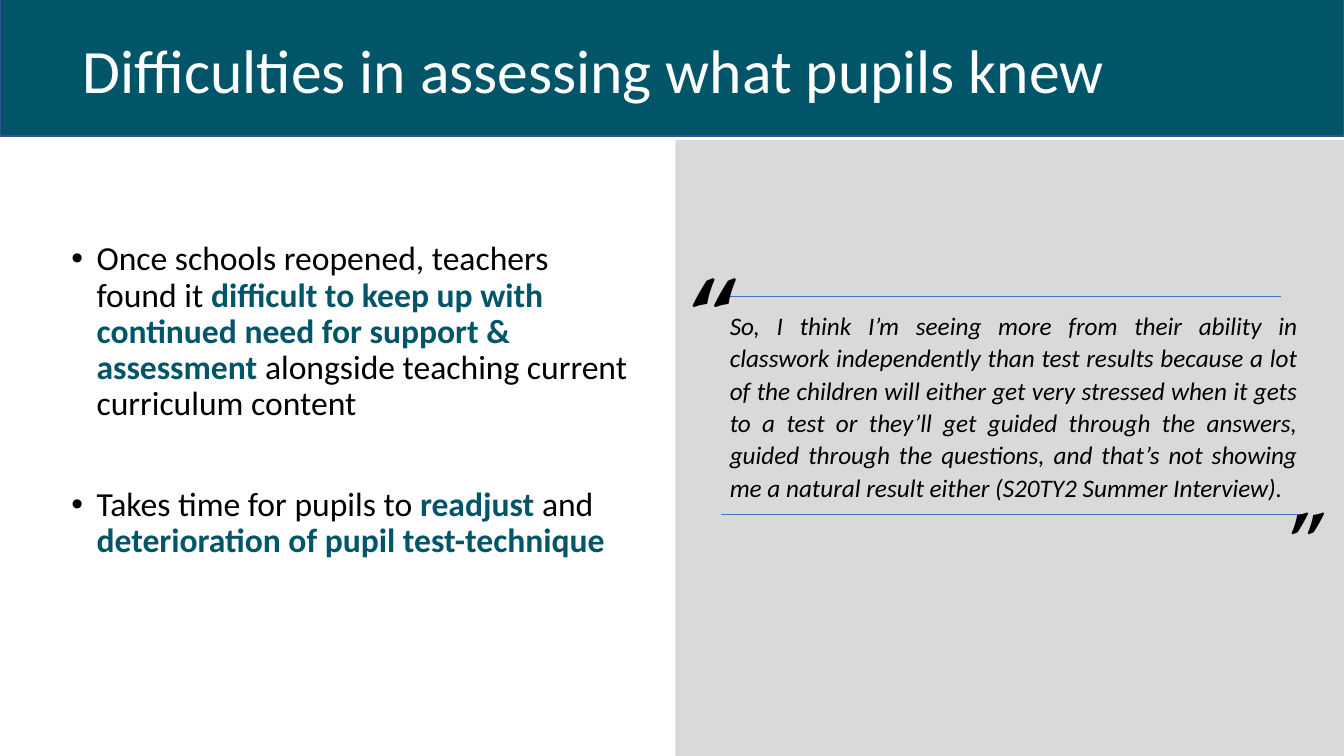
from dataclasses import dataclass

from lxml.etree import SubElement
from pptx import Presentation
from pptx.dml.color import RGBColor
from pptx.enum.shapes import MSO_CONNECTOR as Connector, MSO_SHAPE as Shape
from pptx.enum.text import MSO_ANCHOR as Anchor, MSO_AUTO_SIZE as AutoSize, PP_ALIGN as Align
from pptx.oxml.ns import qn
from pptx.util import Inches, Pt


@dataclass(frozen=True)
class Theme:
    teal: str = "005568"
    grey: str = "D9D9D9"
    black: str = "000000"
    white: str = "FFFFFF"
    banner_edge: str = "325491"
    rule: str = "4472C4"
    body_font: str = "Calibri"
    mark_font: str = "TeX Gyre Pagella"
    title_size: int = 44
    body_size: int = 24
    quote_size: int = 18
    open_mark_size: int = 72
    close_mark_size: int = 54


class SlideBuilder:
    def __init__(self, slide, theme):
        self.shapes = slide.shapes
        self.theme = theme

    def panel(self, left, top, width, height, fill, edge=None):
        panel = self.shapes.add_shape(
            Shape.RECTANGLE, Inches(left), Inches(top), Inches(width), Inches(height))
        panel.shadow.inherit = False
        panel.fill.solid()
        panel.fill.fore_color.rgb = RGBColor.from_string(fill)
        if edge:
            panel.line.color.rgb = RGBColor.from_string(edge)
            panel.line.width = Pt(1)
        else:
            panel.line.fill.background()

    def rule(self, start, end, height):
        rule = self.shapes.add_connector(
            Connector.STRAIGHT, Inches(start), Inches(height), Inches(end), Inches(height))
        rule.line.color.rgb = RGBColor.from_string(self.theme.rule)
        rule.line.width = Pt(0.5)
        SubElement(rule._element.spPr, qn("a:effectLst"))

    def frame(self, left, top, width, height, anchor=Anchor.TOP, grow=False):
        frame = self.shapes.add_textbox(
            Inches(left), Inches(top), Inches(width), Inches(height)).text_frame
        frame.word_wrap = True
        frame.vertical_anchor = anchor
        frame.auto_size = AutoSize.SHAPE_TO_FIT_TEXT if grow else AutoSize.NONE
        return frame

    def run(self, paragraph, text, size, color, font=None, bold=False, italic=False):
        run = paragraph.add_run()
        run.text = text
        run.font.name = font or self.theme.body_font
        run.font.size = Pt(size)
        run.font.bold = bold
        run.font.italic = italic
        run.font.color.rgb = RGBColor.from_string(color)

    def title(self, text):
        paragraph = self.frame(0.72, 0, 11.5, 1.45, Anchor.MIDDLE).paragraphs[0]
        paragraph.line_spacing = 0.9
        self.run(paragraph, text, self.theme.title_size, self.theme.white)

    def bullets(self, left, top, width, height, points):
        frame = self.frame(left, top, width, height)
        for index, (space_before, phrases) in enumerate(points):
            paragraph = frame.add_paragraph() if index else frame.paragraphs[0]
            paragraph.line_spacing = 0.9
            paragraph.space_before = Pt(space_before)
            properties = paragraph._p.get_or_add_pPr()
            properties.set("marL", str(Inches(0.25)))
            properties.set("indent", str(Inches(-0.25)))
            SubElement(properties, qn("a:buFont")).set("typeface", "Arial")
            SubElement(properties, qn("a:buChar")).set("char", "•")
            for text, emphasised in phrases:
                color = self.theme.teal if emphasised else self.theme.black
                self.run(paragraph, text, self.theme.body_size, color, bold=emphasised)

    def quote(self, left, top, width, height, text):
        paragraph = self.frame(left, top, width, height, grow=True).paragraphs[0]
        paragraph.alignment = Align.JUSTIFY
        paragraph.line_spacing = 1.07
        paragraph.space_after = Pt(8)
        paragraph._p.get_or_add_pPr().set("marL", str(Inches(0.5)))
        self.run(paragraph, text, self.theme.quote_size, self.theme.black, italic=True)

    def quote_mark(self, left, top, width, height, mark, size):
        paragraph = self.frame(left, top, width, height, grow=True).paragraphs[0]
        self.run(paragraph, mark, size, self.theme.black, self.theme.mark_font, bold=True)


FINDINGS = [
    (10, [
        ("Once schools reopened, teachers found it ", False),
        ("difficult to keep up with continued need for support & assessment ", True),
        ("alongside teaching current curriculum content", False),
    ]),
    (46, [
        ("Takes time for pupils to ", False),
        ("readjust", True),
        (" and ", False),
        ("deterioration of pupil test-technique", True),
    ]),
]
TEACHER_QUOTE = (
    "So, I think I’m seeing more from their ability in classwork independently than test "
    "results because a lot of the children will either get very stressed when it gets to a "
    "test or they’ll get guided through the answers, guided through the questions, and "
    "that’s not showing me a natural result either (S20TY2 Summer Interview)."
)


def main():
    deck = Presentation()
    deck.slide_width = Inches(13.33)
    deck.slide_height = Inches(7.5)
    theme = Theme()
    builder = SlideBuilder(deck.slides.add_slide(deck.slide_layouts[6]), theme)

    builder.panel(6.7, 1.39, 6.67, 6.13, theme.grey)
    builder.bullets(0.61, 2.35, 5.75, 4.76, FINDINGS)
    builder.quote(6.64, 3.01, 6.33, 2.03, TEACHER_QUOTE)
    builder.panel(0, -0.01, 13.33, 1.36, theme.teal, theme.banner_edge)
    builder.title("Difficulties in assessing what pupils knew")
    builder.rule(7.17, 12.71, 2.94)
    builder.rule(7.15, 12.97, 5.1)
    builder.quote_mark(6.74, 2.41, 0.8, 1.31, "“", theme.open_mark_size)
    builder.quote_mark(12.69, 4.81, 0.64, 1.01, "”", theme.close_mark_size)
    deck.save("out.pptx")


if __name__ == "__main__":
    main()
